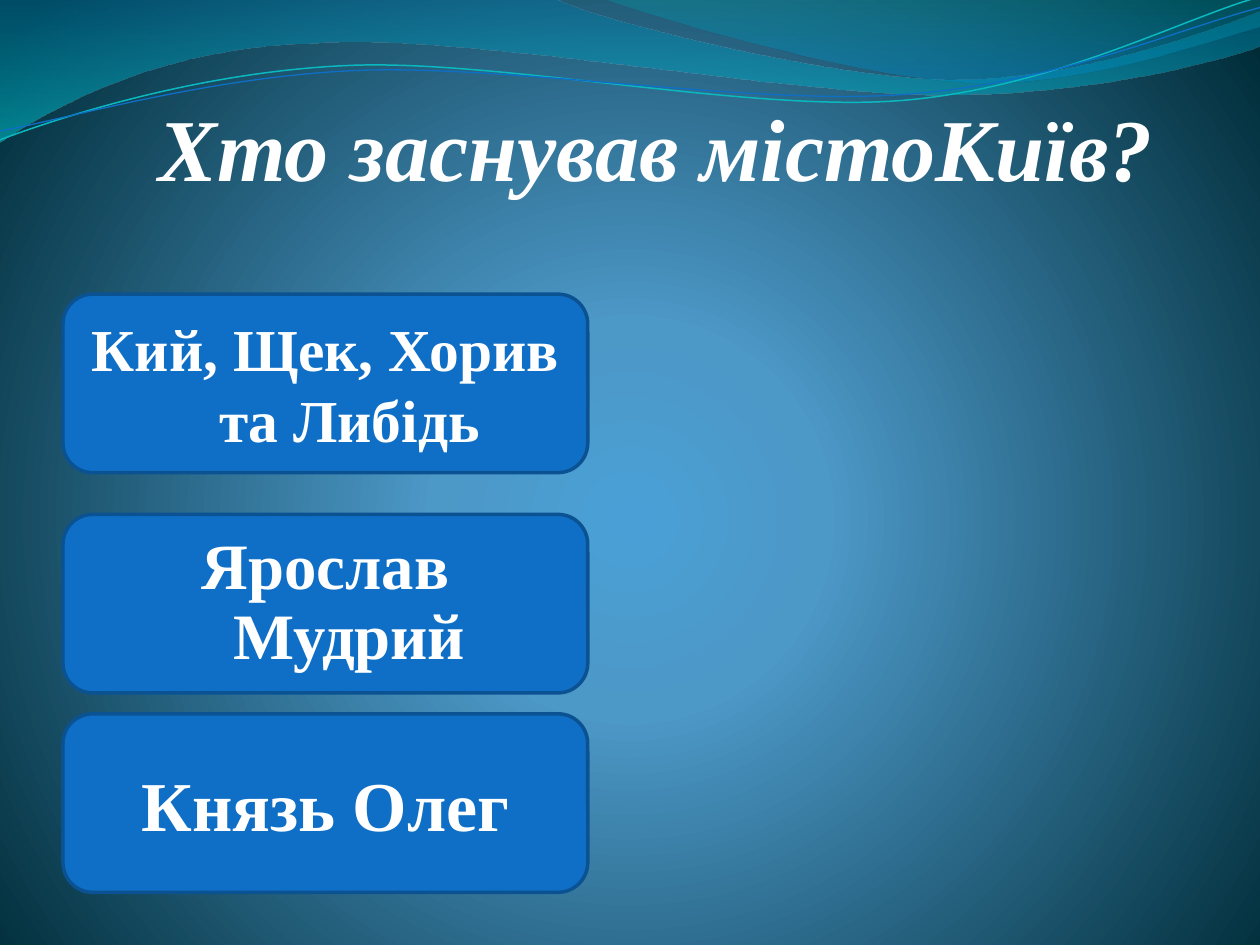
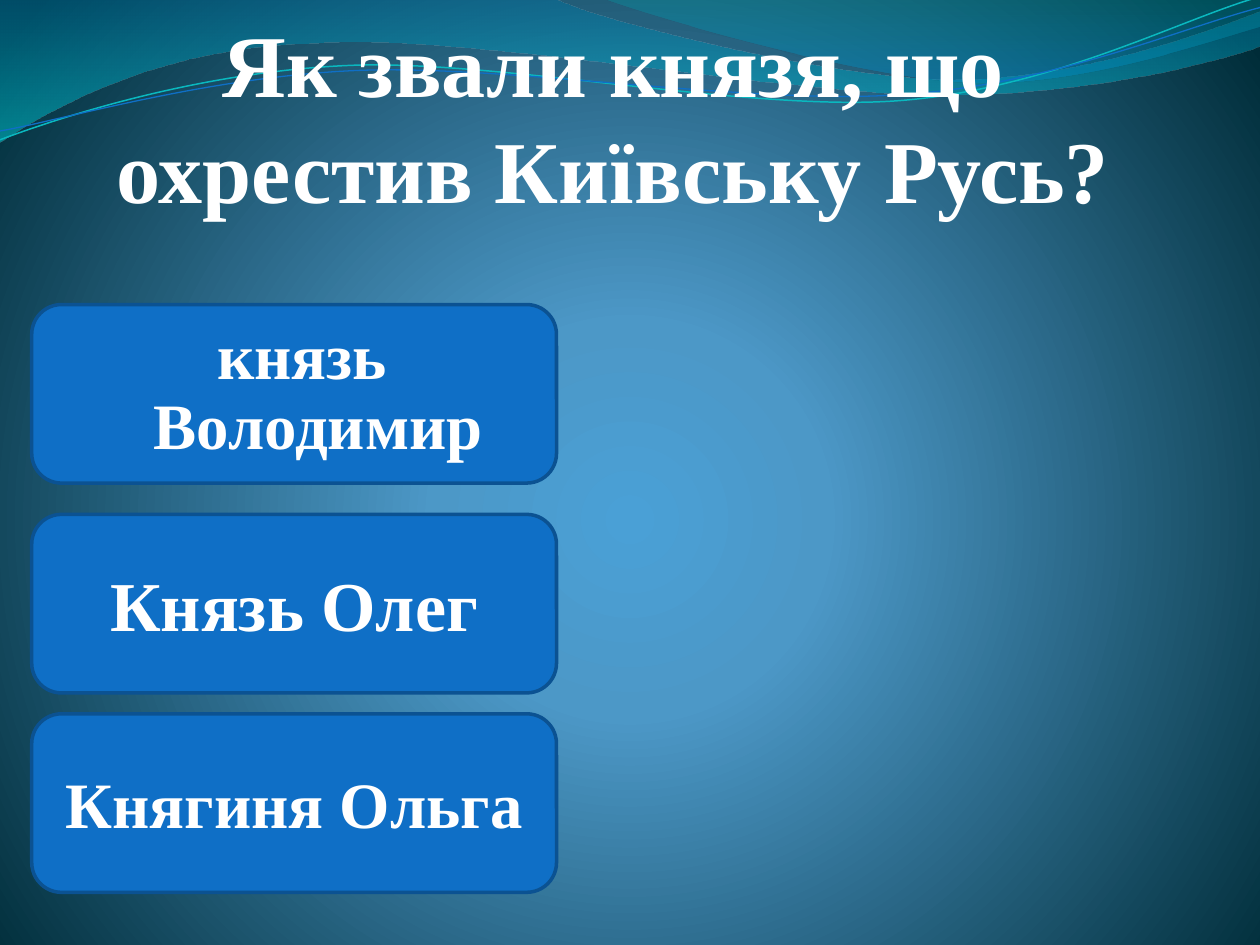
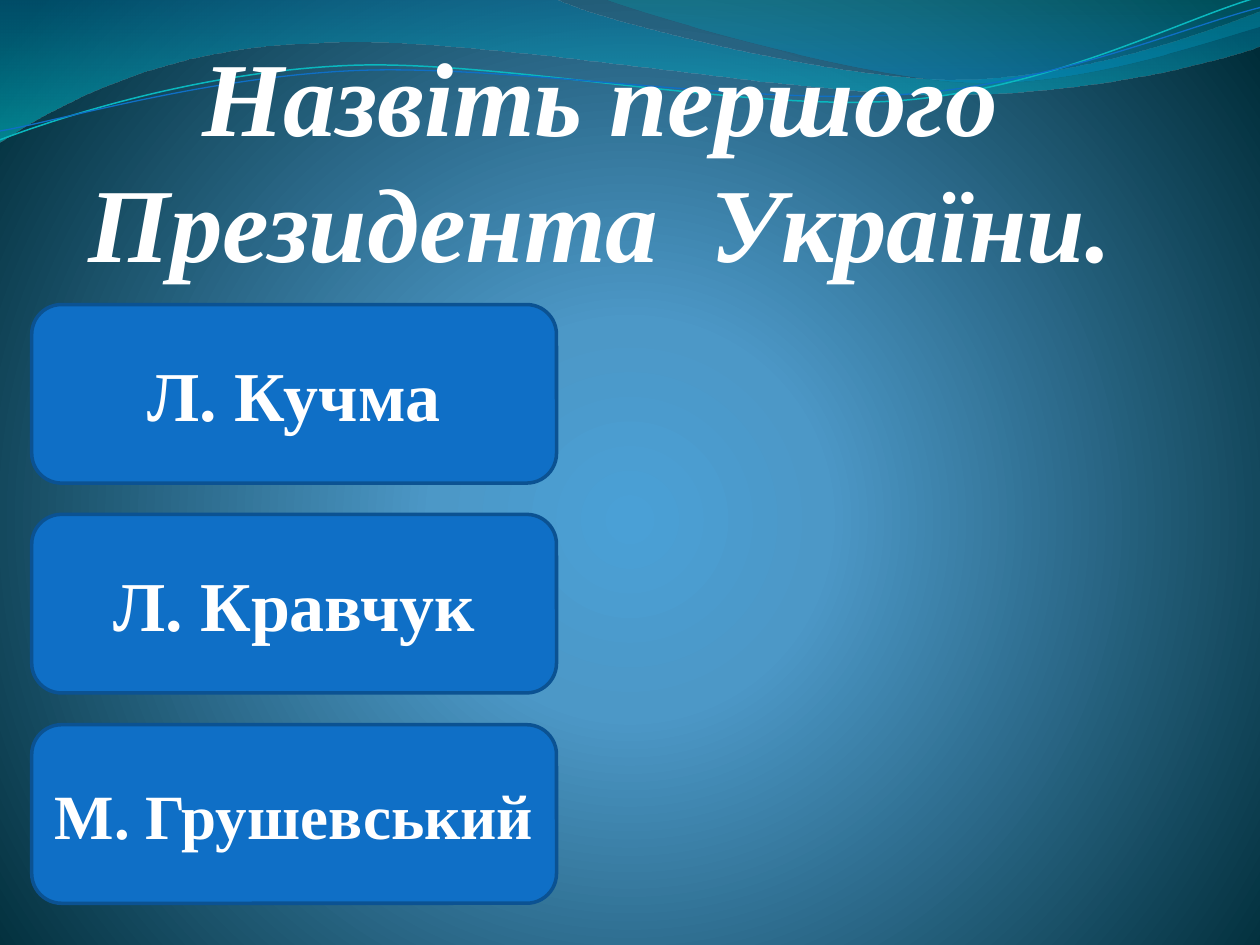
from dataclasses import dataclass

import pptx
import pptx.dml.color
import pptx.enum.shapes
import pptx.enum.text
import pptx.oxml
import pptx.oxml.ns
import pptx.util
from pptx.util import Cm

PAGE_WIDTH, PAGE_HEIGHT = Cm(25.4), Cm(19.05)
FONT = "Times New Roman"
WHITE = "FFFFFF"
BLUE, DARK_BLUE, TURQUOISE = "0F6FC6", "0B5292", "0AB8BF"
TITLE_LEFT, TITLE_WIDTH = 1.48, 21.82
ANSWER_WIDTH, ANSWER_HEIGHT = 10.58, 3.6
HANGING = 0.97

ALIGN = pptx.enum.text.PP_ALIGN
ANCHOR = pptx.enum.text.MSO_ANCHOR

Point = tuple[int, int]
Stop = tuple[int, str, int]  # position %, colour, opacity %

BACKGROUND_STOPS: list[Stop] = [(0, "4AA0D6", 100), (25, "4C98C7", 100), (100, "002C38", 100)]
BACKGROUND_PATH = '<a:path path="circle"><a:fillToRect l="10000" t="110000" r="10000" b="100000"/></a:path>'
DOWNWARD = '<a:lin ang="5400000" scaled="1"/>'


@dataclass(frozen=True)
class Wave:
    """An outline in thousandths of the page width: one point is a line, three a curve."""
    start: Point
    segments: list[tuple[Point, ...]]
    stops: tuple[Stop, ...] = ()
    line: str = ""
    weight: float = 0


@dataclass(frozen=True)
class Title:
    text: str
    top: float
    height: float = 4.02
    size: float = 50.4
    align: ALIGN = ALIGN.CENTER
    italic: bool = True


@dataclass(frozen=True)
class Answer:
    text: str
    top: float
    size: float = 40
    line_spacing: float = 1.0


@dataclass(frozen=True)
class Question:
    title: Title
    answers_left: float
    answers: list[Answer]


WAVES = [
    Wave((0, 0), [
        ((440, -1),),
        ((476, 17), (664, 63), (758, 63)),
        ((853, 63), (958, 26), (1000, 9)),
        ((1001, 36),),
        ((983, 44), (870, 76), (746, 75)),
        ((622, 75), (382, 28), (257, 34)),
        ((129, 36), (46, 83), (-1, 113)),
        ((0, 0),),
    ], stops=((0, "0074A1", 45), (100, "00C6CF", 55))),
    Wave((479, -1), [
        ((509, 11), (682, 62), (769, 65)),
        ((856, 69), (961, 32), (1000, 21)),
        ((1000, 0),),
        ((479, -1),),
    ], stops=((0, "00A1A9", 30), (80, "008BBF", 45))),
    Wave((0, 111), [
        ((48, 93), (158, 57), (277, 52)),
        ((395, 47), (593, 89), (713, 80)),
        ((833, 71), (938, 15), (998, -2)),
    ], line=TURQUOISE, weight=0.85),
    Wave((0, 104), [
        ((47, 96), (164, 61), (283, 56)),
        ((403, 51), (597, 84), (717, 75)),
        ((836, 67), (941, 21), (1000, 6)),
    ], line=BLUE, weight=0.75),
]

QUESTIONS = [
    Question(Title("Хто заснував містоКиїв?", 0, align=ALIGN.RIGHT), 1.27, [
        Answer("Кий, Щек, Хорив та Либідь", 5.93, 34),
        Answer("Ярослав Мудрий", 10.37, 37, 0.9),
        Answer("Князь Олег", 14.39),
    ]),
    Question(Title("Як звали князя, що охрестив Київську Русь?", 0.43, italic=False), 0.64, [
        Answer(" князь Володимир", 6.14, 37, 0.9),
        Answer("Князь Олег", 10.37),
        Answer("Княгиня Ольга", 14.39, 37),
    ]),
    Question(Title("Назвіть першого  Президента  України. ", 0.64, 5.08, 60), 0.64, [
        Answer("Л. Кучма", 6.14),
        Answer("Л. Кравчук", 10.37),
        Answer("М. Грушевський", 14.61, 36),
    ]),
]


def colour(value: str) -> pptx.dml.color.RGBColor:
    return pptx.dml.color.RGBColor.from_string(value)


def stop_xml(position: int, value: str, opacity: int) -> str:
    alpha = f'<a:alpha val="{opacity * 1000}"/>' if opacity < 100 else ""
    return f'<a:gs pos="{position * 1000}"><a:srgbClr val="{colour(value)}">{alpha}</a:srgbClr></a:gs>'


def set_gradient(fill, element, stops, direction: str) -> None:
    """Give fill, the first gradient inside element, these stops and this direction."""
    fill.gradient()
    gradient = element.find(".//" + pptx.oxml.ns.qn("a:gradFill"))
    for child in list(gradient):
        gradient.remove(child)
    namespace = pptx.oxml.ns.nsdecls("a")
    stop_list = "".join(stop_xml(*stop) for stop in stops)
    parts = pptx.oxml.parse_xml(f"<a:gradFill {namespace}><a:gsLst>{stop_list}</a:gsLst>{direction}</a:gradFill>")
    for child in list(parts):
        gradient.append(child)


def bend_segments(shape, segments: list[tuple[Point, ...]]) -> None:
    """Join the three lines drawn for each curved segment into one cubic curve."""
    lines = iter(shape.element.findall(".//" + pptx.oxml.ns.qn("a:lnTo")))
    for segment in segments:
        first, *others = [next(lines) for _ in segment]
        if others:
            first.tag = pptx.oxml.ns.qn("a:cubicBezTo")
            for other in others:
                first.append(other[0])
                other.getparent().remove(other)


def draw_wave(page, wave: Wave) -> None:
    builder = page.shapes.build_freeform(*wave.start, scale=PAGE_WIDTH / 1000)
    points = [point for segment in wave.segments for point in segment]
    builder.add_line_segments(points, close=bool(wave.stops))
    shape = builder.convert_to_shape()
    bend_segments(shape, wave.segments)
    shape.shadow.inherit = False
    if wave.stops:
        set_gradient(shape.fill, shape.element, wave.stops, DOWNWARD)
        shape.line.fill.background()
    else:
        shape.fill.background()
        shape.line.color.rgb = colour(wave.line)
        shape.line.width = pptx.util.Pt(wave.weight)


def write_text(box, text: str, *, size: float, align: ALIGN = ALIGN.CENTER,
               anchor: ANCHOR = ANCHOR.MIDDLE, italic: bool = False,
               line_spacing: float = 1.0, space_before: float = 0, hanging: float = 0) -> None:
    frame = box.text_frame
    frame.word_wrap = True
    frame.vertical_anchor = anchor
    para = frame.paragraphs[0]
    para.alignment = align
    para.line_spacing = line_spacing
    para.space_before = pptx.util.Pt(space_before)
    if hanging:
        properties = para._p.get_or_add_pPr()
        properties.set("marL", str(Cm(hanging)))
        properties.set("indent", str(Cm(-hanging)))
    span = para.add_run()
    span.text = text
    span.font.name = FONT
    span.font.size = pptx.util.Pt(size)
    span.font.bold = True
    span.font.italic = italic
    span.font.color.rgb = colour(WHITE)


def draw_title(page, title: Title) -> None:
    box = page.shapes.add_textbox(Cm(TITLE_LEFT), Cm(title.top), Cm(TITLE_WIDTH), Cm(title.height))
    frame = box.text_frame
    frame.margin_left = frame.margin_top = frame.margin_bottom = 0
    frame.margin_right = Cm(0.05)
    write_text(box, title.text, size=title.size, align=title.align,
               anchor=ANCHOR.BOTTOM, italic=title.italic)


def draw_answer(page, left: float, answer: Answer) -> None:
    box = page.shapes.add_shape(pptx.enum.shapes.MSO_SHAPE.ROUNDED_RECTANGLE,
                                Cm(left), Cm(answer.top), Cm(ANSWER_WIDTH), Cm(ANSWER_HEIGHT))
    box.shadow.inherit = False
    box.fill.solid()
    box.fill.fore_color.rgb = colour(BLUE)
    box.line.color.rgb = colour(DARK_BLUE)
    box.line.width = pptx.util.Pt(2)
    write_text(box, answer.text, size=answer.size, line_spacing=answer.line_spacing,
               space_before=answer.size * 0.2, hanging=HANGING)


def main() -> None:
    deck = pptx.Presentation()
    deck.slide_width, deck.slide_height = PAGE_WIDTH, PAGE_HEIGHT
    master = deck.slide_master
    set_gradient(master.background.fill, master.element, BACKGROUND_STOPS, BACKGROUND_PATH)
    for question in QUESTIONS:
        page = deck.slides.add_slide(deck.slide_layouts[6])
        for wave in WAVES:
            draw_wave(page, wave)
        draw_title(page, question.title)
        for answer in question.answers:
            draw_answer(page, question.answers_left, answer)
    deck.save("out.pptx")


if __name__ == "__main__":
    main()
